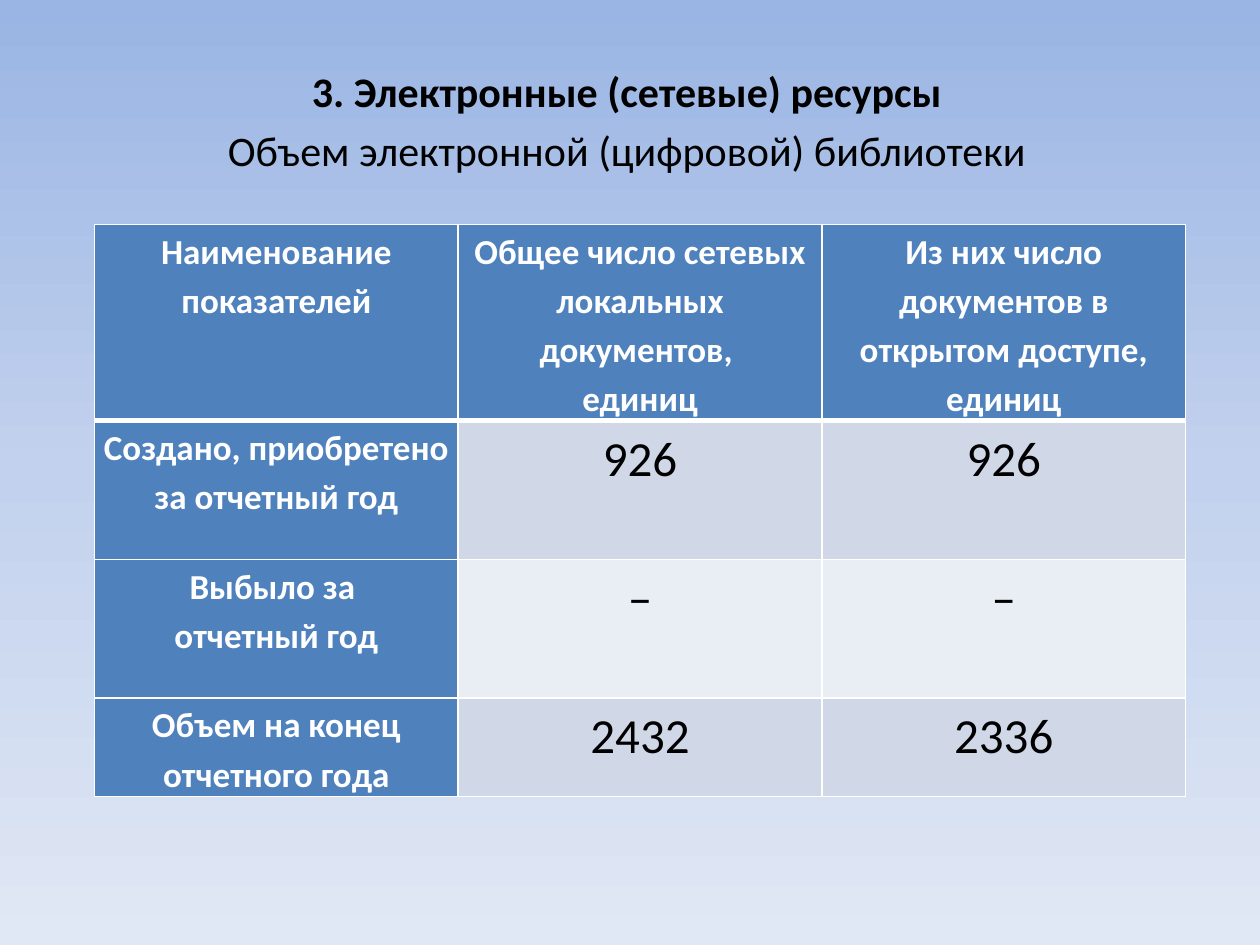
from copy import deepcopy
from dataclasses import dataclass

from lxml import etree
from pptx import Presentation
from pptx import util as u
from pptx.dml.color import RGBColor
from pptx.enum import text
from pptx.oxml.ns import qn


@dataclass(frozen=True)
class Theme:
    font: str = "Calibri"
    ink: str = "000000"
    white: str = "FFFFFF"
    head: str = "4F81BD"
    bands: tuple = ("D0D8E8", "E9EDF4")
    sky: tuple = ((0, "9AB5E4"), (0.5, "C2D1ED"), (1, "E1E8F5"))
    title: int = 24
    label: int = 20
    value: int = 28
    thin: int = 1
    thick: int = 3


class Deck:
    def __init__(self, theme):
        self.theme = theme
        self.file = Presentation()
        self.file.slide_width = u.Inches(10)
        self.file.slide_height = u.Inches(7.5)
        self.slide = self.file.slides.add_slide(self.file.slide_layouts[6])

    def backdrop(self):
        fill = self.slide.background.fill
        fill.gradient()
        fill.gradient_angle = 270
        # The default gradient has two stops; add the middle one
        stops = self.slide.element.xpath(".//a:gsLst")[0]
        stops.append(deepcopy(stops[0]))
        for stop, (place, color) in zip(fill.gradient_stops, self.theme.sky):
            stop.position = place
            stop.color.rgb = RGBColor.from_string(color)

    def lines(self, frame, lines, size, color, lead=None, gap=None):
        """Each line is a pair: wording and whether it is bold."""
        frame.word_wrap = True
        for i, (words, bold) in enumerate(lines):
            para = frame.paragraphs[0] if i == 0 else frame.add_paragraph()
            para.alignment = text.PP_ALIGN.CENTER
            para.line_spacing = lead
            para.space_before = gap
            run = para.add_run()
            run.text = words
            run.font.name = self.theme.font
            run.font.size = u.Pt(size)
            run.font.bold = bold
            run.font.color.rgb = RGBColor.from_string(color)

    def title(self, lines, left, top, width, height):
        box = self.slide.shapes.add_textbox(
            *map(u.Inches, (left, top, width, height)))
        size = self.theme.title
        self.lines(box.text_frame, lines, size, self.theme.ink,
                   gap=u.Pt(size * 0.2))

    def border(self, cell, **sides):
        props = cell._tc.get_or_add_tcPr()
        for i, side in enumerate("LRTB"):
            line = etree.Element(qn(f"a:ln{side}"),
                                 w=str(u.Pt(sides.get(side, self.theme.thin))))
            fill = etree.SubElement(line, qn("a:solidFill"))
            etree.SubElement(fill, qn("a:srgbClr"), val=self.theme.white)
            props.insert(i, line)

    def cell(self, cell, lines, row, col):
        look = self.theme
        label = row == 0 or col == 0
        cell.margin_left = cell.margin_right = u.Inches(0.07)
        cell.margin_top = cell.margin_bottom = 0
        cell.fill.solid()
        color = look.head if label else look.bands[(row - 1) % 2]
        cell.fill.fore_color.rgb = RGBColor.from_string(color)
        # A thick rule parts the header from the body
        rule = {0: {"B": look.thick}, 1: {"T": look.thick}}
        self.border(cell, **rule.get(row, {}))
        self.lines(cell.text_frame, [(words, label) for words in lines],
                   look.label if label else look.value,
                   look.white if label else look.ink, lead=1.15)

    def table(self, rows, left, top, width, heights):
        count = len(rows[0])
        grid = self.slide.shapes.add_table(
            len(rows), count, u.Inches(left), u.Inches(top),
            u.Inches(width), u.Inches(sum(heights))).table
        for col in grid.columns:
            col.width = u.Inches(width / count)
        for r, (row, height) in enumerate(zip(rows, heights)):
            grid.rows[r].height = u.Inches(height)
            for c, words in enumerate(row):
                self.cell(grid.cell(r, c), words.split("\n"), r, c)


ROWS = [
    ("Наименование показателей",
     "Общее число сетевых локальных документов, \nединиц",
     "Из них число документов в открытом доступе, единиц"),
    ("Создано, приобретено за отчетный год", "926", "926"),
    ("Выбыло за \nотчетный год", "–", "–"),
    ("Объем на конец отчетного года", "2432", "2336"),
]


def main():
    deck = Deck(Theme())
    deck.backdrop()
    # Heading
    deck.title([("3. Электронные (сетевые) ресурсы", True),
                ("Объем электронной (цифровой) библиотеки", False)],
               0.5, 0.47, 8.95, 1.1)
    # Library figures
    deck.table(ROWS, 0.75, 1.78, 8.66, (1.56, 1.1, 1.1, 0.78))
    deck.file.save("out.pptx")


if __name__ == "__main__":
    main()
